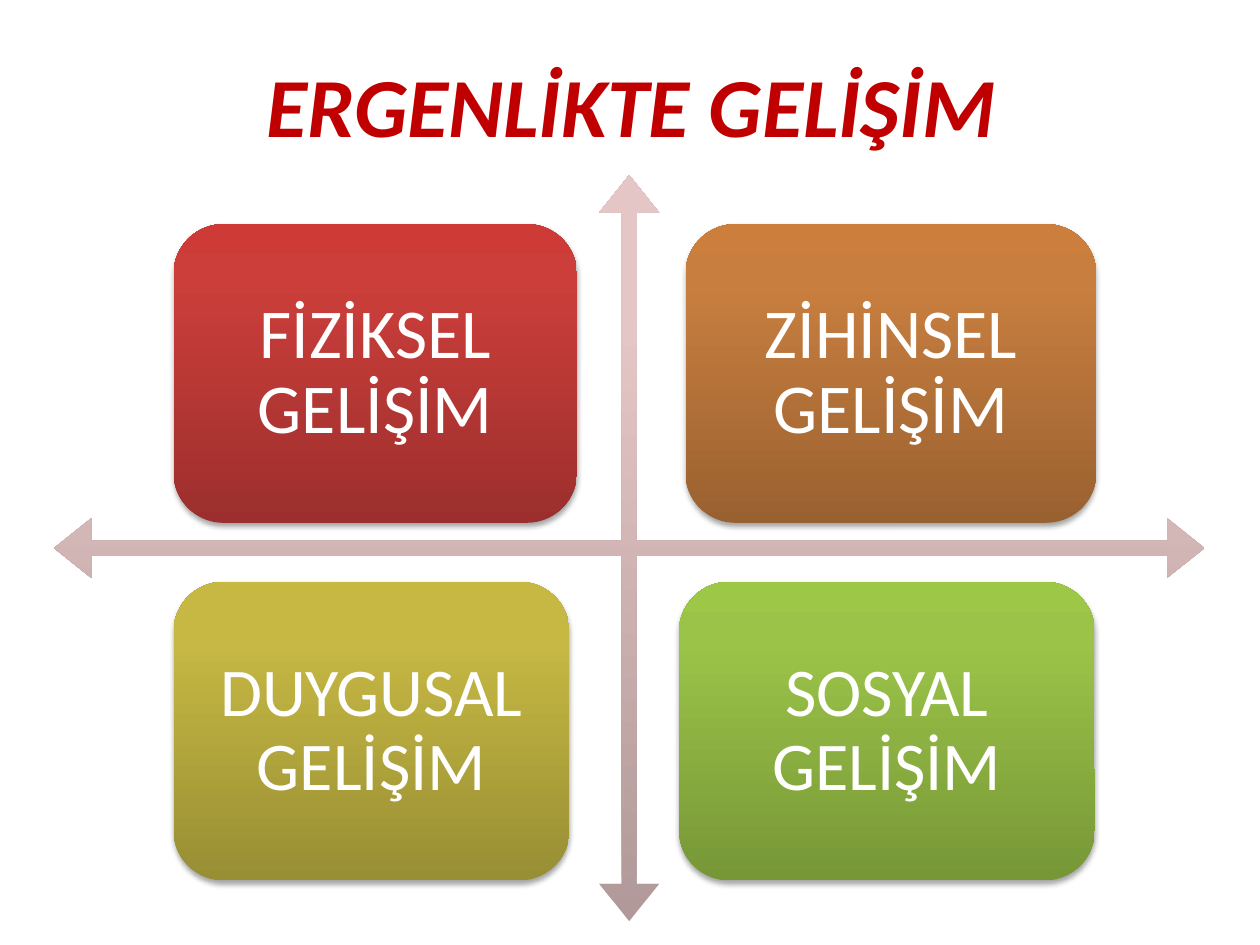
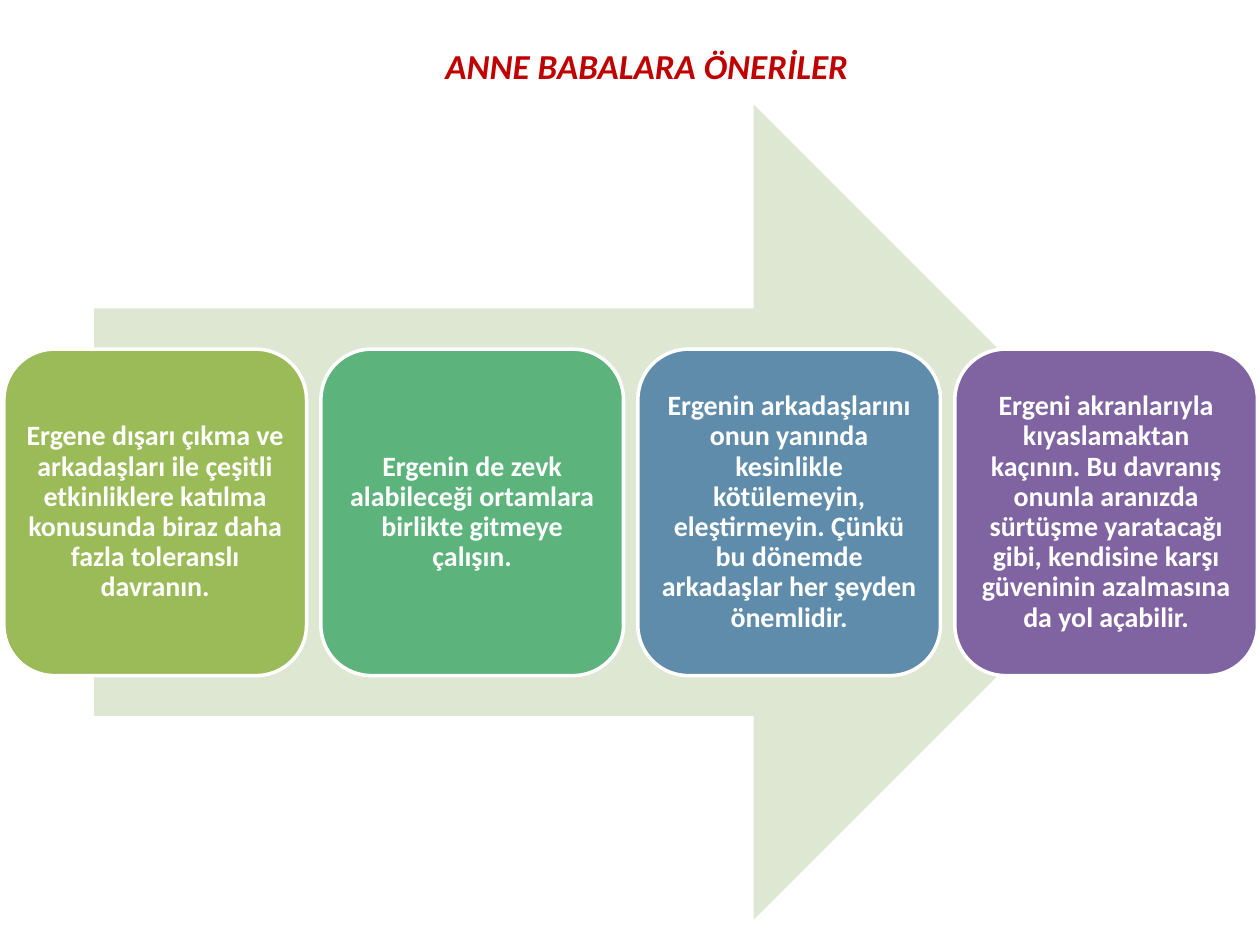
from copy import deepcopy

from lxml.etree import SubElement
from pptx import Presentation
from pptx.dml.color import RGBColor
from pptx.enum.shapes import MSO_SHAPE
from pptx.enum.text import MSO_ANCHOR, MSO_AUTO_SIZE, PP_ALIGN
from pptx.oxml.ns import qn
from pptx.util import Cm, Pt

FONT = "Calibri"
HEX = {
    "title": "C00000",
    "white": "FFFFFF",
    "arrow": "DEE7D1",
}
FADE = {
    "axes": ("B09998", "E5C6C6", "E6C7C6"),
    "red": ("9C2F2D", "CB3E3A", "CE3B37"),
    "orange": ("9A6130", "C87E3F", "CC7E3C"),
    "yellow": ("988E34", "C6B843", "C9BB41"),
    "green": ("779737", "9BC348", "9DC746"),
}
STOPS = (0, 0.8, 1)

AXES = (1.09, 3.53, 23.19, 15.04)
AREAS = [
    ("FİZİKSEL GELİŞİM", "red", 3.5, 8.13),
    ("ZİHİNSEL GELİŞİM", "orange", 13.82, 8.28),
    ("DUYGUSAL GELİŞİM", "yellow", 3.5, 7.98),
    ("SOSYAL GELİŞİM", "green", 13.69, 8.38),
]
ROWS = [(4.52, 40), (11.73, 39)]
AREA_HIGH = 6.02

ARROW = (1.9, 2.11, 21.51, 16.43)
TIPS = [
    ("Ergene dışarı çıkma ve arkadaşları ile çeşitli etkinliklere katılma "
     "konusunda biraz daha fazla toleranslı davranın.", "9BBB59"),
    ("Ergenin de zevk alabileceği ortamlara birlikte gitmeye çalışın.", "5CB37C"),
    ("Ergenin arkadaşlarını onun yanında kesinlikle kötülemeyin, eleştirmeyin. "
     "Çünkü bu dönemde arkadaşlar her şeyden önemlidir.", "608CAB"),
    ("Ergeni akranlarıyla kıyaslamaktan kaçının. Bu davranış onunla aranızda "
     "sürtüşme yaratacağı gibi, kendisine karşı güveninin azalmasına da yol "
     "açabilir.", "8064A2"),
]
TIP_LEFT, TIP_TOP, TIP_WIDE, TIP_HIGH, TIP_STEP = 0.08, 7.04, 6.1, 6.58, 6.39


def color(code):
    return RGBColor.from_string(code)


def write(frame, text, size, code, bold=False, slant=False):
    frame.text = text
    frame.word_wrap = True
    line = frame.paragraphs[0]
    line.alignment = PP_ALIGN.CENTER
    font = line.font
    font.name, font.size = FONT, Pt(size)
    font.bold, font.italic = bold, slant
    font.color.rgb = color(code)
    return line


def add_page(deck, text, size, box, anchor):
    page = deck.slides.add_slide(deck.slide_layouts[5])
    title = page.shapes.title
    title.left, title.top, title.width, title.height = map(Cm, box)
    frame = title.text_frame
    write(frame, text, size, HEX["title"], True, True)
    frame.auto_size = MSO_AUTO_SIZE.NONE
    frame.vertical_anchor = anchor
    return page


def add_form(page, kind, box):
    form = page.shapes.add_shape(kind, *map(Cm, box))
    form.shadow.inherit = False
    form.line.fill.background()
    return form


def paint(form, code):
    form.fill.solid()
    form.fill.fore_color.rgb = color(code)


def fade(form, codes):
    form.fill.gradient()
    form.fill.gradient_angle = 90
    stops = next(form.element.spPr.iter(qn("a:gsLst")))
    stops.append(deepcopy(stops[-1]))
    for stop, place, code in zip(form.fill.gradient_stops, STOPS, codes):
        stop.position = place
        stop.color.rgb = color(code)


def shade(form):
    effects = form.element.spPr.find(qn("a:effectLst"))
    drop = SubElement(effects, qn("a:outerShdw"), blurRad="40000",
                      dist="23000", dir="5400000", rotWithShape="0")
    black = SubElement(drop, qn("a:srgbClr"), val="000000")
    SubElement(black, qn("a:alpha"), val="35000")


def add_card(page, box, text, size, bold=False):
    card = add_form(page, MSO_SHAPE.ROUNDED_RECTANGLE, box)
    frame = card.text_frame
    line = write(frame, text, size, HEX["white"], bold)
    line.line_spacing = 0.9
    frame.vertical_anchor = MSO_ANCHOR.MIDDLE
    frame.margin_left = frame.margin_right = Cm(0.15)
    frame.margin_top = frame.margin_bottom = Cm(0.15)
    return card


def build_areas(deck):
    page = add_page(deck, "ERGENLİKTE GELİŞİM", 48,
                    (1.3, 0.89, 22.86, 2.39), MSO_ANCHOR.MIDDLE)
    axes = add_form(page, MSO_SHAPE.QUAD_ARROW, AXES)
    for spot, ratio in enumerate((0.02, 0.04, 0.05)):
        axes.adjustments[spot] = ratio
    fade(axes, FADE["axes"])
    for spot, (text, hue, left, wide) in enumerate(AREAS):
        top, size = ROWS[spot // 2]
        card = add_card(page, (left, top, wide, AREA_HIGH), text, size)
        fade(card, FADE[hue])
        shade(card)


def build_tips(deck):
    page = add_page(deck, "ANNE BABALARA ÖNERİLER", 20,
                    (5.74, 0.76, 14.6, 1.12), MSO_ANCHOR.TOP)
    paint(add_form(page, MSO_SHAPE.RIGHT_ARROW, ARROW), HEX["arrow"])
    for spot, (text, code) in enumerate(TIPS):
        left = TIP_LEFT + spot * TIP_STEP
        card = add_card(page, (left, TIP_TOP, TIP_WIDE, TIP_HIGH), text, 16, True)
        paint(card, code)
        card.line.color.rgb = color(HEX["white"])
        card.line.width = Pt(2)


def main():
    deck = Presentation()
    deck.slide_width, deck.slide_height = Cm(25.4), Cm(19.05)
    build_areas(deck)
    build_tips(deck)
    deck.save("out.pptx")


if __name__ == "__main__":
    main()
